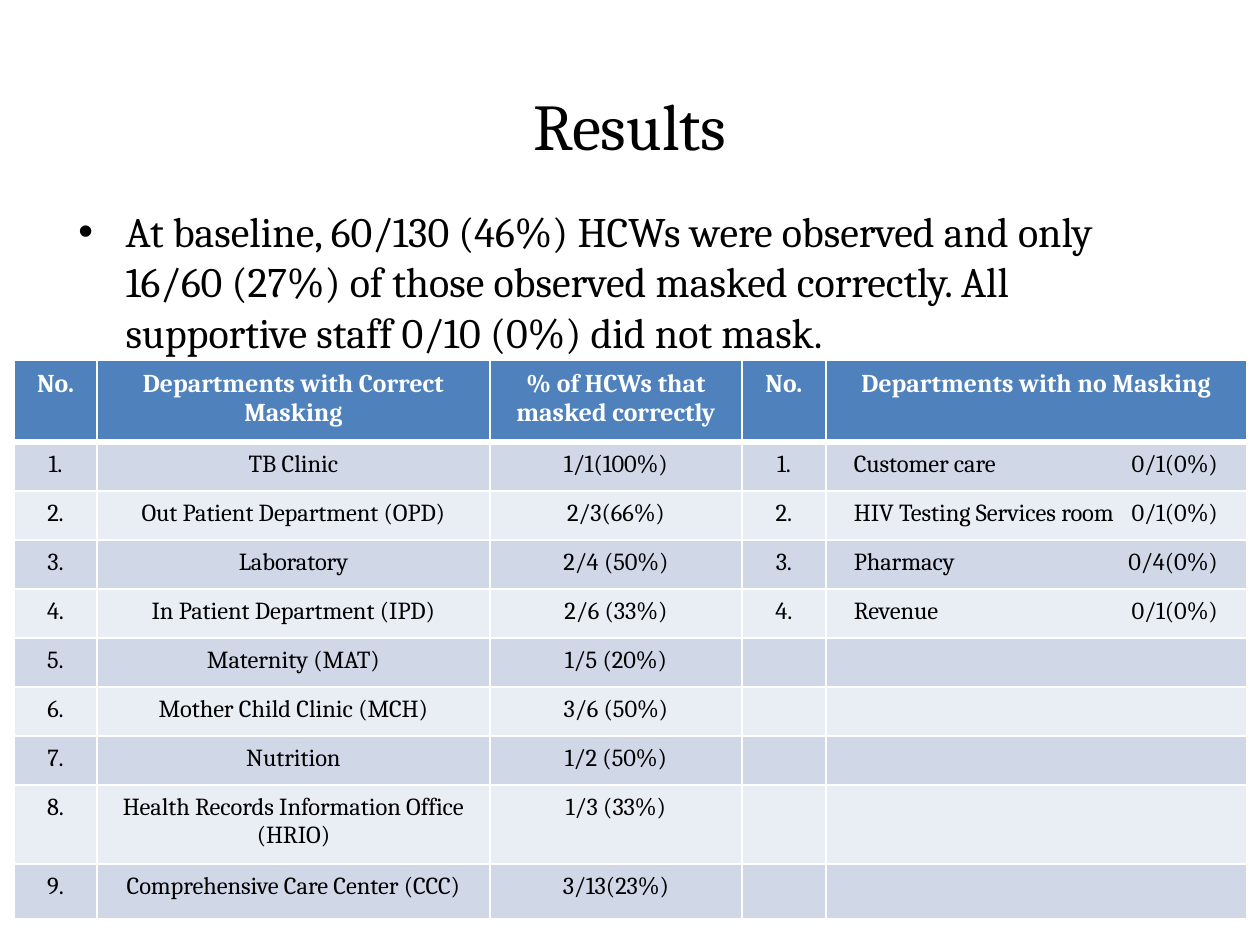
from lxml import etree
from pptx import Presentation
from pptx.dml.color import RGBColor
from pptx.enum.text import MSO_ANCHOR, PP_ALIGN
from pptx.oxml.ns import qn
from pptx.util import Pt

CENTER, LEFT = PP_ALIGN.CENTER, PP_ALIGN.LEFT
TOP, MIDDLE = MSO_ANCHOR.TOP, MSO_ANCHOR.MIDDLE

TITLE = "Results"
FINDING = (
    "At baseline, 60/130 (46%) HCWs were observed and only 16/60 (27%) of those "
    "observed masked correctly. All supportive staff 0/10 (0%) did not mask."
)
HEADERS = [
    "No.",
    "Departments with Correct Masking",
    "% of HCWs that masked correctly",
    "No.",
    "Departments with no Masking",
]
CORRECT_MASKING = [
    ("TB Clinic", "1/1(100%)"),
    ("Out Patient Department (OPD)", "2/3(66%)"),
    ("Laboratory", "2/4 (50%)"),
    ("In Patient Department (IPD)", "2/6 (33%)"),
    ("Maternity (MAT)", "1/5 (20%)"),
    ("Mother Child Clinic (MCH)", "3/6 (50%)"),
    ("Nutrition", "1/2 (50%)"),
    ("Health Records Information Office (HRIO)", "1/3 (33%)"),
    ("Comprehensive Care Center (CCC)", "3/13(23%)"),
]
NO_MASKING = [
    ("Customer care", "0/1(0%)"),
    ("HIV Testing Services room", "0/1(0%)"),
    ("Pharmacy", "0/4(0%)"),
    ("Revenue", "0/1(0%)"),
]

COLORS = {
    "text": "000000",
    "header_text": "FFFFFF",
    "header": "4F81BD",
    "odd_row": "D0D8E8",
    "even_row": "E9EDF4",
    "border": "FFFFFF",
}
FONT = "Cambria"
SLIDE_SIZE = (540, 405)
TITLE_BOX = (26.5, 22.5, 487, 62)
FINDING_BOX = (26.5, 84.5, 487, 291)
TABLE_LEFT, TABLE_TOP = 6, 154.5
COLUMN_WIDTHS = [35.6, 168.4, 108, 36, 180.4]
ROW_HEIGHTS = [35.1] + [21] * 7 + [33.9, 23.6]
BULLET_INDENT = 20.25
NO_MASKING_MARGIN, COUNT_TAB = 12, 156
BORDER, HEADER_RULE = 1, 3


def emu(points):
    return str(int(Pt(points)))


def write(paragraph, text, align, size, color, bold=False):
    paragraph.alignment = align
    run = paragraph.add_run()
    run.text = text
    style = {"name": FONT, "size": Pt(size), "bold": bold}
    for attribute, value in style.items():
        setattr(run.font, attribute, value)
    run.font.color.rgb = RGBColor.from_string(COLORS[color])


def add_box(slide, box, anchor):
    frame = slide.shapes.add_textbox(*map(Pt, box)).text_frame
    frame.word_wrap = True
    frame.vertical_anchor = anchor
    return frame.paragraphs[0]


def add_bullet(paragraph):
    properties = paragraph._p.get_or_add_pPr()
    properties.set("marL", emu(BULLET_INDENT))
    properties.set("indent", emu(-BULLET_INDENT))
    etree.SubElement(properties, qn("a:buFont"), typeface="Arial")
    etree.SubElement(properties, qn("a:buChar"), char="•")


def add_count_tab(paragraph):
    """Line up the counts of the last column on a right tab."""
    tabs = etree.SubElement(paragraph._p.get_or_add_pPr(), qn("a:tabLst"))
    etree.SubElement(tabs, qn("a:tab"), pos=emu(COUNT_TAB), algn="r")


def add_borders(cell, top, bottom):
    properties = cell._tc.get_or_add_tcPr()
    widths = {"a:lnL": BORDER, "a:lnR": BORDER, "a:lnT": top, "a:lnB": bottom}
    for side, width in widths.items():
        line = etree.SubElement(properties, qn(side), w=emu(width))
        fill = etree.SubElement(line, qn("a:solidFill"))
        etree.SubElement(fill, qn("a:srgbClr"), val=COLORS["border"])


def department_rows():
    rows = [HEADERS]
    for index, (department, count) in enumerate(CORRECT_MASKING):
        number = f"{index + 1}."
        unmasked = ["", ""]
        if index < len(NO_MASKING):
            unmasked = [number, "\t".join(NO_MASKING[index])]
        rows.append([number, department, count] + unmasked)
    return rows


def fill_cell(cell, text, row):
    add_borders(
        cell,
        top=HEADER_RULE if row == 1 else BORDER,
        bottom=HEADER_RULE if row == 0 else BORDER,
    )
    band = "header" if row == 0 else ("even_row", "odd_row")[row % 2]
    cell.fill.solid()
    cell.fill.fore_color.rgb = RGBColor.from_string(COLORS[band])
    paragraph = cell.text_frame.paragraphs[0]
    if not text:
        etree.SubElement(paragraph._p, qn("a:endParaRPr"), sz="1050")
    elif row == 0:
        write(paragraph, text, CENTER, 11, "header_text", bold=True)
    elif "\t" in text:
        cell.margin_left = Pt(NO_MASKING_MARGIN)
        add_count_tab(paragraph)
        write(paragraph, text, LEFT, 10.5, "text")
    else:
        write(paragraph, text, CENTER, 10.5, "text")


def add_department_table(slide):
    rows = department_rows()
    frame = (TABLE_LEFT, TABLE_TOP, sum(COLUMN_WIDTHS), sum(ROW_HEIGHTS))
    table = slide.shapes.add_table(
        len(rows), len(HEADERS), *map(Pt, frame)
    ).table
    table.horz_banding = False
    for column, width in zip(table.columns, COLUMN_WIDTHS):
        column.width = Pt(width)
    for row, height in zip(table.rows, ROW_HEIGHTS):
        row.height = Pt(height)
    for row, texts in enumerate(rows):
        for column, text in enumerate(texts):
            fill_cell(table.cell(row, column), text, row)


def main():
    deck = Presentation()
    deck.slide_width, deck.slide_height = map(Pt, SLIDE_SIZE)
    slide = deck.slides.add_slide(deck.slide_layouts[6])

    write(add_box(slide, TITLE_BOX, MIDDLE), TITLE, CENTER, 28, "text")
    finding = add_box(slide, FINDING_BOX, TOP)
    add_bullet(finding)
    write(finding, FINDING, LEFT, 18, "text")
    add_department_table(slide)
    deck.save("out.pptx")


if __name__ == "__main__":
    main()
